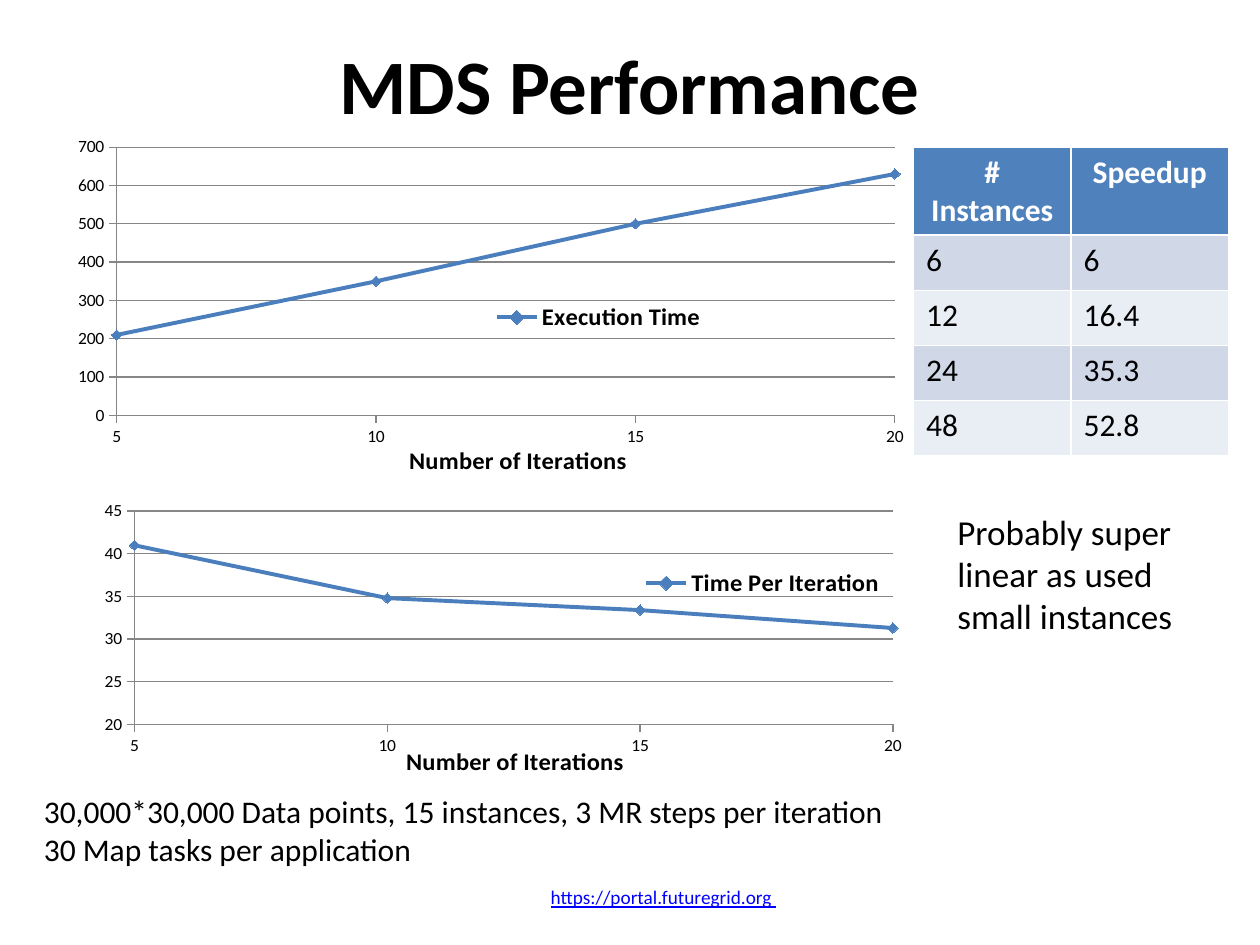
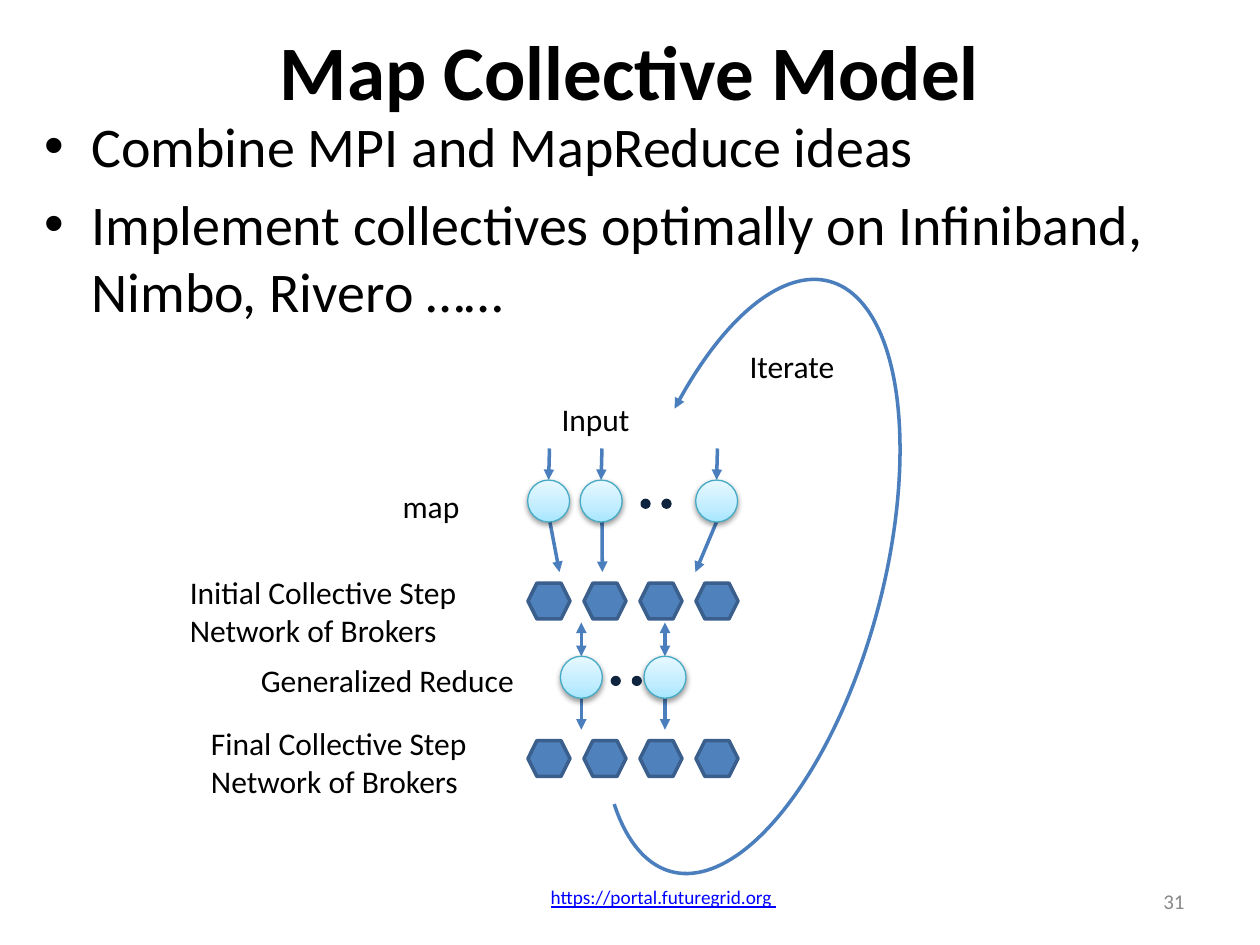
from copy import deepcopy

from lxml.etree import SubElement
from pptx import Presentation
from pptx.chart.data import XyChartData
from pptx.dml.color import RGBColor
from pptx.enum.chart import XL_CHART_TYPE, XL_LEGEND_POSITION, XL_MARKER_STYLE, XL_TICK_MARK
from pptx.enum.shapes import MSO_CONNECTOR, MSO_SHAPE
from pptx.enum.text import MSO_ANCHOR, MSO_AUTO_SIZE, PP_ALIGN
from pptx.oxml.ns import qn
from pptx.util import Pt

# Shared style
FONT = "Calibri"
BLACK, WHITE, GRAY, LINK = "000000", "FFFFFF", "898989", "0000FF"
BLUE, LINE, HEX_EDGE, NAVY = "4F81BD", "4B7EBC", "3A5F8C", "0F243E"
CIRCLE_EDGE, GRID = "46AAC5", "868686"
BANDS = ["D0D8E8", "E9EDF4"]
GLOW = [(0, "A7E6FF"), (0.35, "C1EDFF"), (1, "E7F8FF")]
TITLE_ONLY, TITLE_AND_BODY = 5, 1


def color(value):
    return RGBColor.from_string(value)


def points(*values):
    return [Pt(value) for value in values]


def set_font(font, size, ink=BLACK, bold=False, underline=False):
    font.name, font.size, font.bold = FONT, Pt(size), bold
    font.color.rgb = color(ink)
    if underline:
        font.underline = True


def write(para, text, size=18, align=None, **look):
    para.text = text
    if align is not None:
        para.alignment = align
    for span in para.runs:
        set_font(span.font, size, **look)


def add_heads(line, *ends):
    for end in ends:
        SubElement(line._get_or_add_ln(), qn(f"a:{end}End"), type="triangle")


def set_layout(element, index, inner=False, **place):
    """Place a chart part by fractions of the chart's size."""
    for old in element.findall(qn("c:layout")):
        element.remove(old)
    layout = SubElement(element, qn("c:layout"))
    element.insert(index, layout)
    manual = SubElement(layout, qn("c:manualLayout"))
    if inner:
        SubElement(manual, qn("c:layoutTarget"), val="inner")
    for mode in ("xMode", "yMode"):
        SubElement(manual, qn(f"c:{mode}"), val="edge")
    for key, value in place.items():
        SubElement(manual, qn(f"c:{key}"), val=str(value))


class Builder:
    def __init__(self):
        self.deck = Presentation()
        self.deck.slide_width, self.deck.slide_height = points(720, 540)
        self.page = None

    def start(self, layout, title, top, height):
        self.page = self.deck.slides.add_slide(self.deck.slide_layouts[layout])
        self.text("https://portal.futuregrid.org ", 247.7, 498.2, 262.8, 28.8, size=11,
                  ink=LINK, underline=True, align=PP_ALIGN.CENTER, anchor=MSO_ANCHOR.MIDDLE)
        box = self.page.shapes.title
        self.move(box, 36, top, 648, height)
        box.text_frame.vertical_anchor = MSO_ANCHOR.MIDDLE
        write(box.text_frame.paragraphs[0], title, size=44, bold=True, align=PP_ALIGN.CENTER)

    def move(self, box, *place):
        box.left, box.top, box.width, box.height = points(*place)
        box.text_frame.auto_size = MSO_AUTO_SIZE.NONE

    def text(self, text, left, top, width, height, wrap=True, anchor=MSO_ANCHOR.TOP, **look):
        box = self.page.shapes.add_textbox(*points(left, top, width, height))
        box.text_frame.word_wrap = wrap
        box.text_frame.vertical_anchor = anchor
        write(box.text_frame.paragraphs[0], text, **look)

    def bullets(self, items, *place):
        box = self.page.placeholders[1]
        self.move(box, *place)
        frame = box.text_frame
        for index, item in enumerate(items):
            para = frame.add_paragraph() if index else frame.paragraphs[0]
            properties = para._p.get_or_add_pPr()
            properties.set("marL", str(Pt(27)))
            properties.set("indent", str(-Pt(27)))
            SubElement(properties, qn("a:buChar"), char="•")
            para.space_before = Pt(6.4 if index else 0)
            write(para, item, size=32)

    def shape(self, kind, left, top, width, height, fill=None, edge=LINE, weight=2):
        shape = self.page.shapes.add_shape(kind, *points(left, top, width, height))
        shape.shadow.inherit = False
        if fill:
            shape.fill.solid()
            shape.fill.fore_color.rgb = color(fill)
        else:
            shape.fill.background()
        shape.line.color.rgb = color(edge)
        shape.line.width = Pt(weight)
        return shape

    def circle(self, left, top):
        circle = self.shape(MSO_SHAPE.OVAL, left, top, 24, 24, edge=CIRCLE_EDGE, weight=0.75)
        fill = circle.fill
        fill.gradient()
        fill.gradient_angle = 90
        properties = circle._element.spPr
        stops = properties.find(".//" + qn("a:gsLst"))
        stops.insert(1, deepcopy(stops[0]))
        for stop, (position, ink) in zip(fill.gradient_stops, GLOW):
            stop.position = position
            stop.color.rgb = color(ink)
        shadow = SubElement(properties.find(qn("a:effectLst")), qn("a:outerShdw"),
                            blurRad=str(Pt(3.1)), dist=str(Pt(1.6)), dir="5400000",
                            rotWithShape="0")
        ink = SubElement(shadow, qn("a:srgbClr"), val=BLACK)
        SubElement(ink, qn("a:alpha"), val="38000")

    def arrow(self, *ends, heads=("tail",)):
        arrow = self.page.shapes.add_connector(MSO_CONNECTOR.STRAIGHT, *points(*ends))
        arrow.line.color.rgb = color(LINE)
        arrow.line.width = Pt(2)
        add_heads(arrow.line, *heads)
        SubElement(arrow._element.spPr, qn("a:effectLst"))

    def table(self, rows, left, top, column_width, row_height):
        width, height = column_width * len(rows[0]), row_height * len(rows)
        table = self.page.shapes.add_table(
            len(rows), len(rows[0]), *points(left, top, width, height)).table
        for r, row in enumerate(rows):
            for c, value in enumerate(row):
                cell = table.cell(r, c)
                cell.fill.solid()
                cell.fill.fore_color.rgb = color(BANDS[(r - 1) % 2] if r else BLUE)
                look = {} if r else {"ink": WHITE, "bold": True, "align": PP_ALIGN.CENTER}
                write(cell.text_frame.paragraphs[0], value, **look)

    def chart(self, name, values, place, low, high, step, plot, legend, axis_title):
        data = XyChartData()
        series = data.add_series(name)
        for iterations, value in zip((5, 10, 15, 20), values):
            series.add_data_point(iterations, value)
        chart = self.page.shapes.add_chart(
            XL_CHART_TYPE.XY_SCATTER_SMOOTH, *points(*place), data).chart
        chart.has_title = False
        set_font(chart.font, 10)
        chart.plots[0].vary_by_categories = False
        set_layout(chart._chartSpace.chart.plotArea, 0, inner=True, **plot)

        # Curve
        curve = chart.plots[0].series[0]
        curve.smooth = True
        curve.format.line.color.rgb = color(LINE)
        curve.format.line.width = Pt(2.25)
        marker = curve.marker
        marker.style, marker.size = XL_MARKER_STYLE.DIAMOND, 6
        marker.format.fill.solid()
        marker.format.fill.fore_color.rgb = color(BLUE)
        marker.format.line.color.rgb = color(LINE)

        # Axes
        across, up = chart.category_axis, chart.value_axis
        for axis, (start, end, unit) in ((across, (5, 20, 5)), (up, (low, high, step))):
            axis.minimum_scale, axis.maximum_scale, axis.major_unit = start, end, unit
            axis.major_tick_mark = XL_TICK_MARK.OUTSIDE
            axis.minor_tick_mark = XL_TICK_MARK.NONE
            axis.format.line.color.rgb = color(GRID)
        across.has_major_gridlines = False
        up.has_major_gridlines = True
        up.major_gridlines.format.line.color.rgb = color(GRID)
        title = across.axis_title
        write(title.text_frame.paragraphs[0], "Number of Iterations", size=14, bold=True)
        set_layout(title._element, 1, **axis_title)

        # Legend
        chart.has_legend = True
        chart.legend.position = XL_LEGEND_POSITION.RIGHT
        chart.legend.include_in_layout = False
        set_font(chart.legend.font, 14, bold=True)
        set_layout(chart.legend._element, 1, **legend)


def add_performance(builder):
    builder.start(TITLE_ONLY, "MDS Performance", 12, 72)
    builder.chart("Execution Time", (210, 350, 500, 630), (30, 72, 516, 204), 0, 700, 100,
                  plot={"x": 0.071, "y": 0.061, "w": 0.862, "h": 0.771},
                  legend={"x": 0.48, "y": 0.49, "w": 0.25, "h": 0.12},
                  axis_title={"x": 0.39, "y": 0.9})
    builder.chart("Time Per Iteration", (41, 34.8, 33.4, 31.3), (18, 274, 516, 174), 20, 45, 5,
                  plot={"x": 0.114, "y": 0.107, "w": 0.84, "h": 0.72},
                  legend={"x": 0.67, "y": 0.28, "w": 0.28, "h": 0.14},
                  axis_title={"x": 0.41, "y": 0.88})
    builder.text("30,000*30,000 Data points, 15 instances, 3 MR steps per iteration\n"
                 "30 Map tasks per application", 18, 449, 504, 51)
    builder.table([("# Instances", "Speedup"), ("6", "6"), ("12", "16.4"),
                   ("24", "35.3"), ("48", "52.8")], 522, 84, 90, 31.5)
    builder.text("Probably super linear as used small instances", 540, 288, 156, 80, size=20)


def add_model(builder):
    builder.start(TITLE_AND_BODY, "Map Collective Model", 1.5, 77)
    builder.bullets(["Combine MPI and MapReduce ideas",
                     "Implement collectives optimally on Infiniband, Nimbo, Rivero ……"],
                    18, 60, 648, 54)
    builder.text("31", 516, 500.5, 168, 28.8, size=12, ink=GRAY,
                 align=PP_ALIGN.RIGHT, anchor=MSO_ANCHOR.MIDDLE)

    # Iteration loop
    loop = builder.shape(MSO_SHAPE.ARC, 353.5, 154.8, 150.5, 349.2)
    loop.rotation = 15
    loop.adjustments[0], loop.adjustments[1] = 138.44, 63.52
    add_heads(loop.line, "head")

    # Map tasks: circle centre and the point its output reaches
    for center, target in ((313.5, 319.7), (343.5, 344.2), (409.5, 397.4)):
        builder.arrow(center + 0.5, 256.3, center, 274.3)
        builder.arrow(center + 0.5, 297, target, 326.9)
        builder.circle(center - 12, 274.3)

    # Reduce tasks
    for center in (332.2, 380):
        builder.arrow(center, 355.7, center, 375, heads=("head", "tail"))
        builder.arrow(center, 399, center, 417)
        builder.circle(center - 12, 375)

    # Ellipsis dots
    for left, top in ((367, 286), (350, 387.2)):
        for offset in (0, 12):
            builder.shape(MSO_SHAPE.OVAL, left + offset, top, 3.8, 3.8, NAVY, NAVY)

    # Broker networks
    for top in (333.2, 423.2):
        for column in range(4):
            builder.shape(MSO_SHAPE.HEXAGON, 301.7 + 32 * column, top, 24, 20.5, BLUE, HEX_EDGE)

    # Labels
    for label, left, top, width, height in (
            ("Input", 313.8, 224.8, 54, 29),
            ("map", 223, 275, 47.5, 29),
            ("Generalized Reduce", 142, 374.2, 162, 29),
            ("Initial Collective Step\nNetwork of Brokers", 101.4, 324, 169, 51),
            ("Final Collective Step\nNetwork of Brokers", 113.5, 410, 163, 51),
            ("Iterate", 421.2, 195, 63.4, 29)):
        builder.text(label, left, top, width, height, wrap=False)


def main():
    builder = Builder()
    add_performance(builder)
    add_model(builder)
    builder.deck.save("out.pptx")


if __name__ == "__main__":
    main()
